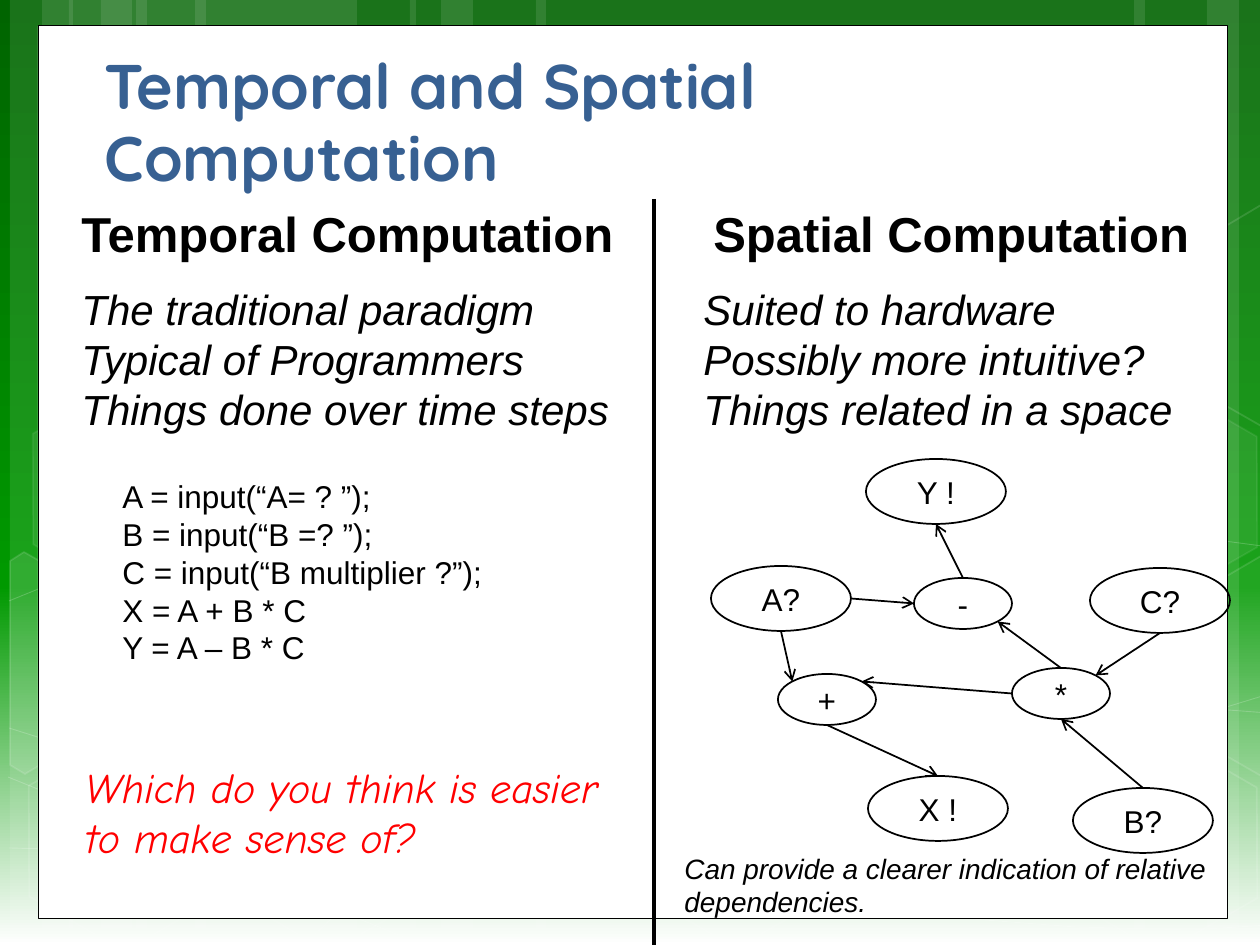
from copy import deepcopy
from math import cos, radians, sin

from lxml.etree import SubElement
from pptx import Presentation
from pptx.dml.color import RGBColor
from pptx.enum.shapes import MSO_CONNECTOR, MSO_SHAPE
from pptx.enum.text import MSO_ANCHOR, MSO_AUTO_SIZE, PP_ALIGN
from pptx.oxml.ns import qn
from pptx.util import Pt

PX = 914400 / 126
WIDTH, HEIGHT = 1260, 945
BLACK, WHITE, RED, BLUE = "000000", "FFFFFF", "FF0000", "376092"

BACKGROUND = [(0, "006400"), (0.62, "009900"), (1, WHITE)]
# left, width
BANDS = [(136, 221), (10, 63), (42, 105), (195, 221), (69, 63), (101, 105),
         (924, 221), (1207, 63), (1134, 105), (536, 388), (410, 63), (441, 105)]
CURVES = [
    [(9, 848), (239, 854), (577, 838), (998, 777), (1269, 694)],
    [(9, 601), (152, 543), (437, 488), (824, 488), (1269, 547)],
    [(8, 777), (421, 944)],
    [(9, 728), (161, 776), (450, 848), (791, 905), (1075, 927), (1191, 930), (1269, 925)],
    [(305, 944), (381, 871), (489, 805), (592, 767), (766, 728), (857, 717),
     (1000, 708), (1201, 708), (1268, 713)],
]
# left, top, fill opacity, line opacity
HEXAGONS = [(626, 742, 6, 12), (14, 745, 0, 12), (18, 393, 7, 8),
            (219, 746, 0, 12), (1051, 747, 0, 12), (1051, 396, 7, 8)]
# outline, fill opacity
CUT_HEXAGONS = [
    ([(10, 561), (24, 552), (121, 607), (120, 718), (25, 774), (10, 765)], 10),
    ([(1167, 611), (1261, 556), (1271, 562), (1271, 772), (1263, 777), (1167, 722)], 4),
    ([(1167, 261), (1261, 205), (1273, 212), (1271, 422), (1263, 427), (1167, 372)], 0),
]
PANEL = (38, 26, 1189, 893)
TITLE = ("Temporal and Spatial Computation", (92, 106, 1061, 96))
DIVIDER = ((654, 199), (654, 945))

# box, lines, wrap, style
TEXTS = [
    ((69, 197, 563, 72), ["Temporal Computation"], False, dict(size=28, bold=True)),
    ((701, 197, 507, 72), ["Spatial Computation"], False, dict(size=28, bold=True)),
    ((69, 277, 558, 165),
     ["The traditional paradigm", "Typical of Programmers", "Things done over time steps"],
     False, dict(size=24, italic=True)),
    ((691, 277, 500, 165),
     ["Suited to hardware", "Possibly more intuitive?", "Things related in a space"],
     False, dict(size=24, italic=True)),
    ((110, 471, 391, 204),
     ["A = input(“A= ? ”);", "B = input(“B =? ”);", "C = input(“B multiplier ?”);",
      "X = A + B * C", "Y = A – B * C"], False, dict(size=18)),
    ((73, 755, 570, 115), ["Which do you think is easier to make sense of?"],
     True, dict(size=24, italic=True, font="Comic Neue", color=RED)),
    ((672, 845, 558, 81), ["Can provide a clearer indication of relative dependencies."],
     True, dict(size=16, italic=True)),
]

VARIABLE, OPERATOR = (140, 65), (98, 51)
# label: left, top, size
NODES = {
    "A?": (711, 566, VARIABLE), "B?": (1073, 788, VARIABLE), "C?": (1090, 568, VARIABLE),
    "X !": (868, 776, VARIABLE), "Y !": (866, 459, VARIABLE),
    "+": (778, 674, OPERATOR), "*": (1012, 668, OPERATOR), "-": (914, 578, OPERATOR),
}
# angles on an ellipse, clockwise from the right
RIGHT, LOWER_RIGHT, BOTTOM, LEFT, UPPER_LEFT, TOP, UPPER_RIGHT = 0, 45, 90, 180, 225, 270, 315
ARROWS = [
    ("A?", BOTTOM, "+", UPPER_LEFT), ("*", LEFT, "+", UPPER_RIGHT),
    ("B?", TOP, "*", BOTTOM), ("C?", BOTTOM, "*", UPPER_RIGHT),
    ("+", BOTTOM, "X !", TOP), ("*", TOP, "-", LOWER_RIGHT),
    ("A?", RIGHT, "-", LEFT), ("-", TOP, "Y !", BOTTOM),
]


def emu(*lengths):
    return [round(length * PX) for length in lengths]


def rgb(color):
    return RGBColor.from_string(color)


def set_opacity(properties, color_path, opacity):
    if opacity < 100:
        color = properties.find("/".join(qn(tag) for tag in color_path))
        SubElement(color, qn("a:alpha"), val=str(opacity * 1000))


def style_shape(shape, fill=WHITE, fill_opacity=100, line=None, width=1, line_opacity=100):
    shape.shadow.inherit = False
    properties = shape.element.spPr
    if fill_opacity:
        shape.fill.solid()
        shape.fill.fore_color.rgb = rgb(fill)
        set_opacity(properties, ["a:solidFill", "a:srgbClr"], fill_opacity)
    else:
        shape.fill.background()
    if line:
        shape.line.color.rgb = rgb(line)
        shape.line.width = Pt(width)
        set_opacity(properties, ["a:ln", "a:solidFill", "a:srgbClr"], line_opacity)
    else:
        shape.line.fill.background()


def write(frame, lines, size, font="Arial", color=BLACK, bold=False, italic=False,
          align=PP_ALIGN.LEFT):
    for index, line in enumerate(lines):
        paragraph = frame.add_paragraph() if index else frame.paragraphs[0]
        paragraph.alignment = align
        run = paragraph.add_run()
        run.text = line
        run.font.size, run.font.name = Pt(size), font
        run.font.bold, run.font.italic = bold, italic
        run.font.color.rgb = rgb(color)


def add_outline(slide, points, closed, **style):
    builder = slide.shapes.build_freeform(*points[0], scale=PX)
    builder.add_line_segments(points[1:], close=closed)
    style_shape(builder.convert_to_shape(), line=WHITE, **style)


def add_line(slide, start, end, width, arrow=False):
    line = slide.shapes.add_connector(MSO_CONNECTOR.STRAIGHT, *emu(*start, *end))
    line.line.color.rgb = rgb(BLACK)
    line.line.width = Pt(width)
    if arrow:
        SubElement(line.line._get_or_add_ln(), qn("a:tailEnd"), type="arrow")
    SubElement(line.element.spPr, qn("a:effectLst"))


def paint_background(slide):
    fill = slide.background.fill
    fill.gradient()
    fill.gradient_angle = 270
    stop_list = slide.element.find(".//" + qn("a:gsLst"))
    stop_list.append(deepcopy(stop_list[-1]))
    for stop, (position, color) in zip(fill.gradient_stops, BACKGROUND):
        stop.position = position
        stop.color.rgb = rgb(color)


def add_decoration(slide):
    for left, width in BANDS:
        band = slide.shapes.add_shape(MSO_SHAPE.RECTANGLE, *emu(left, 0, width, HEIGHT))
        style_shape(band, fill_opacity=10)
    for points in CURVES:
        add_outline(slide, points, False, fill_opacity=0, width=0.5, line_opacity=20)
    for left, top, fill_opacity, line_opacity in HEXAGONS:
        hexagon = slide.shapes.add_shape(MSO_SHAPE.HEXAGON, *emu(left, top, 221, 192))
        hexagon.adjustments[0], hexagon.adjustments[1] = 0.29, 1.15
        hexagon.rotation = 30
        style_shape(hexagon, fill_opacity=fill_opacity, line=WHITE, line_opacity=line_opacity)
    for points, fill_opacity in CUT_HEXAGONS:
        add_outline(slide, points, True, fill_opacity=fill_opacity, line_opacity=12)
    panel = slide.shapes.add_shape(MSO_SHAPE.RECTANGLE, *emu(*PANEL))
    style_shape(panel, line=BLACK, width=0.5)


def add_title(slide):
    text, box = TITLE
    title = slide.shapes.title
    title.element.getparent().append(title.element)  # in front of the panel
    title.left, title.top, title.width, title.height = emu(*box)
    frame = title.text_frame
    frame.auto_size = MSO_AUTO_SIZE.NONE
    frame.vertical_anchor = MSO_ANCHOR.BOTTOM
    write(frame, [text], 36, "Quicksand", BLUE, bold=True)
    frame.paragraphs[0].line_spacing = 0.95


def add_texts(slide):
    for box, lines, wrap, style in TEXTS:
        frame = slide.shapes.add_textbox(*emu(*box)).text_frame
        frame.word_wrap = wrap
        frame.auto_size = MSO_AUTO_SIZE.SHAPE_TO_FIT_TEXT
        write(frame, lines, **style)


def point_on_node(label, angle):
    left, top, (width, height) = NODES[label]
    return (left + width / 2 * (1 + cos(radians(angle))),
            top + height / 2 * (1 + sin(radians(angle))))


def add_graph(slide):
    for label, (left, top, size) in NODES.items():
        node = slide.shapes.add_shape(MSO_SHAPE.OVAL, *emu(left, top, *size))
        style_shape(node, fill_opacity=0, line=BLACK)
        node.text_frame.vertical_anchor = MSO_ANCHOR.MIDDLE
        node.text_frame.word_wrap = False
        write(node.text_frame, [label], 18, align=PP_ALIGN.CENTER)
    for source, source_angle, target, target_angle in ARROWS:
        add_line(slide, point_on_node(source, source_angle),
                 point_on_node(target, target_angle), 1, arrow=True)


def main():
    presentation = Presentation()
    presentation.slide_width, presentation.slide_height = emu(WIDTH, HEIGHT)
    slide = presentation.slides.add_slide(presentation.slide_layouts[5])
    paint_background(slide)
    add_decoration(slide)
    add_title(slide)
    add_texts(slide)
    add_line(slide, *DIVIDER, 2.25)
    add_graph(slide)
    presentation.save("out.pptx")


if __name__ == "__main__":
    main()
